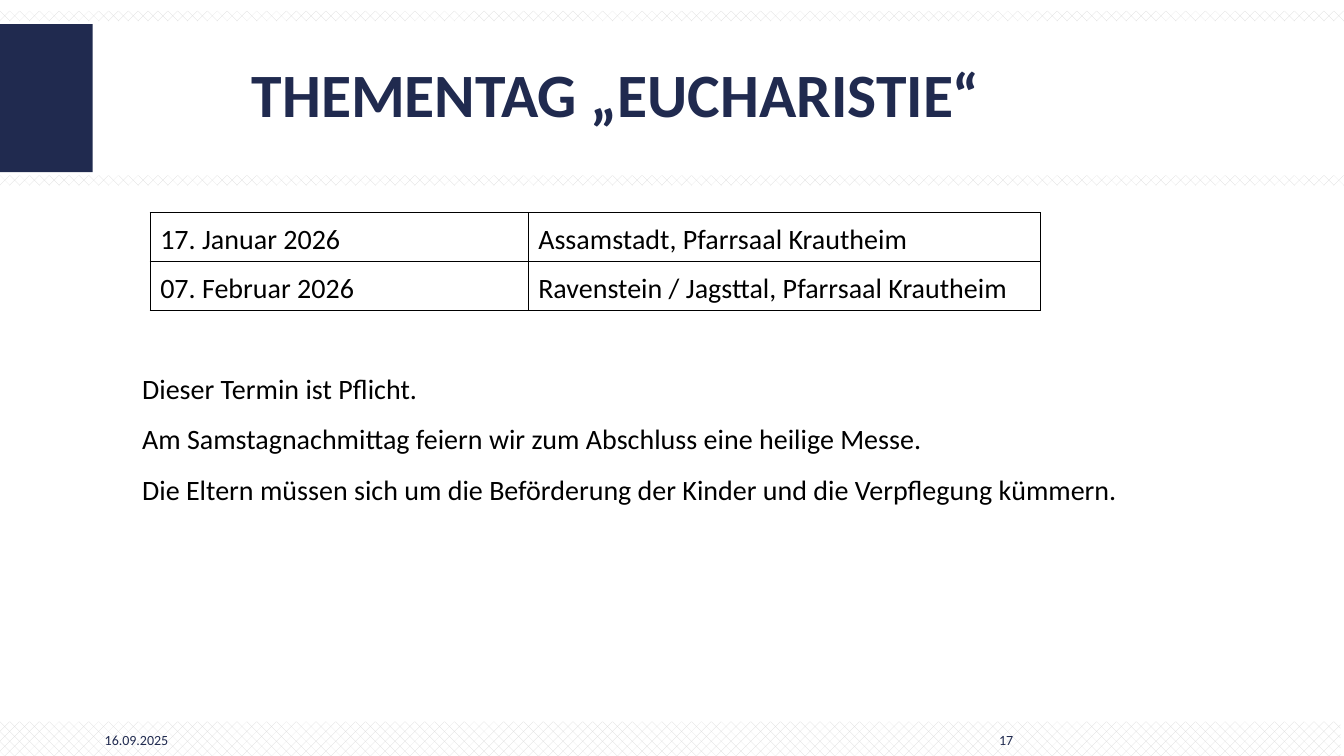
from dataclasses import dataclass
from typing import Optional

from lxml.etree import SubElement
from pptx import Presentation
from pptx.dml.color import RGBColor
from pptx.enum.dml import MSO_PATTERN
from pptx.enum.shapes import MSO_SHAPE
from pptx.enum.text import MSO_ANCHOR, MSO_AUTO_SIZE, PP_ALIGN
from pptx.oxml.ns import qn
from pptx.slide import Slide
from pptx.table import _Cell
from pptx.text.text import _Paragraph
from pptx.util import Pt


@dataclass(frozen=True)
class Theme:
    font: str = "Calibri"
    navy: RGBColor = RGBColor(0x20, 0x2A, 0x4F)
    black: RGBColor = RGBColor(0, 0, 0)
    white: RGBColor = RGBColor(0xFF, 0xFF, 0xFF)
    hatch: RGBColor = RGBColor(0xD9, 0xD9, 0xD9)
    title_size: float = 44
    body_size: float = 20
    footer_size: float = 10


@dataclass(frozen=True)
class Box:
    left: float
    top: float
    width: float
    height: float


@dataclass(frozen=True)
class Band:
    box: Box
    solid: Optional[RGBColor] = None


@dataclass(frozen=True)
class FooterText:
    text: str
    box: Box
    alignment: PP_ALIGN


THEME = Theme()
SLIDE_WIDTH, SLIDE_HEIGHT = 960, 540

BANDS = [
    Band(Box(0, 515.5, 957.6, 25.9)),
    Band(Box(0, 125.3, SLIDE_WIDTH, 7.2)),
    Band(Box(0, 17.3, 66.2, 105.8), THEME.navy),
    Band(Box(0, 7.9, SLIDE_WIDTH, 7.2)),
]
FOOTERS = [
    FooterText("16.09.2025", Box(67.7, 517.7, 70.6, 22.3), PP_ALIGN.LEFT),
    FooterText("17", Box(689.8, 517.7, 41, 22.3), PP_ALIGN.RIGHT),
]
TITLE = "THEMENTAG „EUCHARISTIE“"
TITLE_BOX = Box(66.2, 17.3, 748.1, 104.4)
NOTES = [
    "Dieser Termin ist Pflicht.",
    "Am Samstagnachmittag feiern wir zum Abschluss eine heilige Messe.",
    "Die Eltern müssen sich um die Beförderung der Kinder und die Verpflegung kümmern.",
]
NOTES_BOX = Box(94.3, 249.8, 743, 112.3)
DATES = [
    ("17. Januar 2026", "Assamstadt, Pfarrsaal Krautheim"),
    ("07. Februar 2026", "Ravenstein / Jagsttal, Pfarrsaal Krautheim"),
]
COLUMN_WIDTHS = (270, 365.8)
ROW_HEIGHT = 35
TABLE_BOX = Box(107.3, 151.9, sum(COLUMN_WIDTHS), ROW_HEIGHT * len(DATES))


def lengths(box: Box) -> tuple[Pt, Pt, Pt, Pt]:
    return Pt(box.left), Pt(box.top), Pt(box.width), Pt(box.height)


def place(shape, box: Box) -> None:
    shape.left, shape.top, shape.width, shape.height = lengths(box)


def format_runs(paragraph: _Paragraph, size: float, color: RGBColor, bold: bool = False) -> None:
    for run in paragraph.runs:
        run.font.name = THEME.font
        run.font.size = Pt(size)
        run.font.bold = bold
        run.font.color.rgb = color


def add_band(slide: Slide, band: Band) -> None:
    shape = slide.shapes.add_shape(MSO_SHAPE.RECTANGLE, *lengths(band.box))
    shape.shadow.inherit = False
    shape.line.fill.background()
    if band.solid is not None:
        shape.fill.solid()
        shape.fill.fore_color.rgb = band.solid
    else:
        shape.fill.patterned()
        shape.fill.pattern = MSO_PATTERN.PERCENT_30
        shape.fill.fore_color.rgb = THEME.hatch
        shape.fill.back_color.rgb = THEME.white


def fill_title(slide: Slide) -> None:
    title = slide.shapes.title
    place(title, TITLE_BOX)
    text_frame = title.text_frame
    text_frame.text = TITLE
    text_frame.auto_size = MSO_AUTO_SIZE.NONE
    text_frame.vertical_anchor = MSO_ANCHOR.MIDDLE
    paragraph = text_frame.paragraphs[0]
    paragraph.alignment = PP_ALIGN.CENTER
    paragraph.line_spacing = 0.9
    format_runs(paragraph, THEME.title_size, THEME.navy, bold=True)


def fill_notes(slide: Slide) -> None:
    """Fill the body placeholder with plain, unbulleted lines."""
    body = slide.placeholders[1]
    place(body, NOTES_BOX)
    text_frame = body.text_frame
    text_frame.text = "\n".join(NOTES)
    text_frame.word_wrap = False
    text_frame.auto_size = MSO_AUTO_SIZE.SHAPE_TO_FIT_TEXT
    text_frame.vertical_anchor = MSO_ANCHOR.TOP
    for paragraph in text_frame.paragraphs:
        properties = paragraph._p.get_or_add_pPr()
        properties.set("marL", "0")
        properties.set("indent", "0")
        SubElement(properties, qn("a:buNone"))
        paragraph.alignment = PP_ALIGN.LEFT
        paragraph.line_spacing = 1.5
        paragraph.space_before = Pt(0)
        format_runs(paragraph, THEME.body_size, THEME.black)


def add_footer(slide: Slide, footer: FooterText) -> None:
    text_frame = slide.shapes.add_textbox(*lengths(footer.box)).text_frame
    text_frame.word_wrap = True
    text_frame.vertical_anchor = MSO_ANCHOR.MIDDLE
    text_frame.text = footer.text
    paragraph = text_frame.paragraphs[0]
    paragraph.alignment = footer.alignment
    format_runs(paragraph, THEME.footer_size, THEME.navy)


def add_borders(cell: _Cell) -> None:
    properties = cell._tc.get_or_add_tcPr()
    for side in ("lnL", "lnR", "lnT", "lnB"):
        line = SubElement(properties, qn(f"a:{side}"), w=str(Pt(1)))
        fill = SubElement(line, qn("a:solidFill"))
        SubElement(fill, qn("a:srgbClr"), val=str(THEME.black))


def add_dates_table(slide: Slide) -> None:
    frame = slide.shapes.add_table(len(DATES), len(COLUMN_WIDTHS), *lengths(TABLE_BOX))
    table = frame.table
    table.first_row = False
    table.horz_banding = False
    for column, width in zip(table.columns, COLUMN_WIDTHS):
        column.width = Pt(width)
    for row, texts in zip(table.rows, DATES):
        row.height = Pt(ROW_HEIGHT)
        for cell, text in zip(row.cells, texts):
            add_borders(cell)
            cell.fill.background()
            cell.text_frame.text = text
            paragraph = cell.text_frame.paragraphs[0]
            paragraph.line_spacing = 1.15
            format_runs(paragraph, THEME.body_size, THEME.black)


def main() -> None:
    presentation = Presentation()
    presentation.slide_width = Pt(SLIDE_WIDTH)
    presentation.slide_height = Pt(SLIDE_HEIGHT)
    slide = presentation.slides.add_slide(presentation.slide_layouts[1])
    for band in BANDS:
        add_band(slide, band)
    fill_title(slide)
    fill_notes(slide)
    for footer in FOOTERS:
        add_footer(slide, footer)
    add_dates_table(slide)
    presentation.save("out.pptx")


if __name__ == "__main__":
    main()
